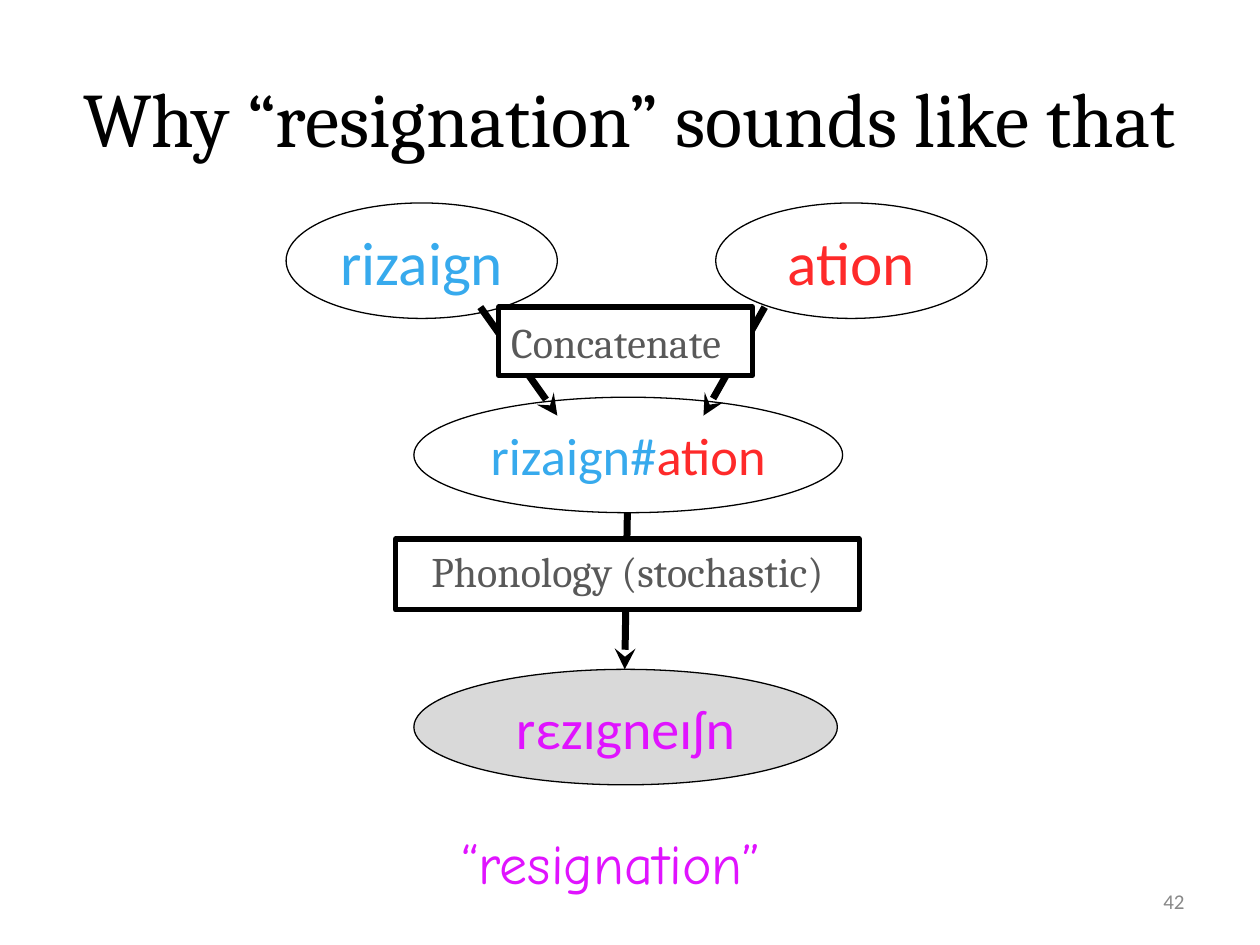
"""Build the slide that derives the sound of "resignation" step by step."""
from lxml import etree
from pptx import Presentation
from pptx.dml.color import RGBColor
from pptx.enum import shapes, text
from pptx.oxml.ns import qn
from pptx.util import Pt

BLACK = RGBColor(0x00, 0x00, 0x00)
WHITE = RGBColor(0xFF, 0xFF, 0xFF)
SHADE = RGBColor(0xD9, 0xD9, 0xD9)
BLUE = RGBColor(0x37, 0xAA, 0xED)
RED = RGBColor(0xFE, 0x2A, 0x2A)
MAGENTA = RGBColor(0xE0, 0x13, 0xFF)
DARK_GRAY = RGBColor(0x59, 0x59, 0x59)
GRAY = RGBColor(0x88, 0x88, 0x88)

LEFT, CENTER, RIGHT = text.PP_ALIGN.LEFT, text.PP_ALIGN.CENTER, text.PP_ALIGN.RIGHT
TOP, MIDDLE = text.MSO_ANCHOR.TOP, text.MSO_ANCHOR.MIDDLE
OVAL, RECTANGLE = shapes.MSO_SHAPE.OVAL, shapes.MSO_SHAPE.RECTANGLE
OVAL_HEIGHT = 66


def write(shape, parts, font, size, align=CENTER, anchor=MIDDLE, wrap=True):
    """Fill a shape with one paragraph made of (wording, colour) parts."""
    frame = shape.text_frame
    frame.word_wrap = wrap
    frame.vertical_anchor = anchor
    para = frame.paragraphs[0]
    para.alignment = align
    para.font.name, para.font.size = font, Pt(size)
    for wording, color in parts:
        span = para.add_run()
        span.text = wording
        span.font.color.rgb = color


def add_outlined(page, kind, box, fill, weight):
    """Add a black-outlined shape with an optional fill."""
    shape = page.shapes.add_shape(kind, *map(Pt, box))
    shape.shadow.inherit = False
    if fill is None:
        shape.fill.background()
    else:
        shape.fill.solid()
        shape.fill.fore_color.rgb = fill
    shape.line.color.rgb = BLACK
    shape.line.width = Pt(weight)
    return shape


def add_form(page, left, top, width, parts, size, fill=None):
    """Add an ellipse holding one word form."""
    oval = add_outlined(page, OVAL, (left, top, width, OVAL_HEIGHT), fill, 0.75)
    write(oval, parts, "Calibri", size, wrap=False)


def add_process(page, box, wording, align, anchor):
    """Add a heavy rectangle naming a processing step."""
    block = add_outlined(page, RECTANGLE, box, WHITE, 3)
    write(block, [(wording, DARK_GRAY)], "Cambria", 24, align, anchor)


def add_arrow(page, begin, end):
    """Add a thick arrow between two points."""
    arrow = page.shapes.add_connector(
        shapes.MSO_CONNECTOR.STRAIGHT, *map(Pt, begin + end))
    arrow.line.color.rgb = BLACK
    arrow.line.width = Pt(4)
    etree.SubElement(arrow.line._get_or_add_ln(), qn("a:tailEnd"), type="stealth")
    etree.SubElement(arrow._element.spPr, qn("a:effectLst"))


def add_text(page, box, wording, color, font, size, align, anchor):
    """Add a text box with one line."""
    label = page.shapes.add_textbox(*map(Pt, box))
    write(label, [(wording, color)], font, size, align, anchor)


def place_title(page, left, top, width, height):
    """Place and format the title."""
    title = page.shapes.title
    title.left, title.top, title.width, title.height = map(
        Pt, (left, top, width, height))
    write(title, [("Why “resignation” sounds like that", BLACK)], "Cambria", 44)


def draw_derivation(page, left, top):
    """Draw the flow from morphemes to spoken word from a top-left corner."""
    add_form(page, left, top, 155, [("rizaign", BLUE)], 35)
    add_form(page, left + 245.5, top, 155, [("ation", RED)], 35)
    add_form(page, left + 73, top + 111, 245,
             [("rizaign#", BLUE), ("ation", RED)], 30)
    add_form(page, left + 73, top + 266.5, 242, [("rεzɪgneɪʃn", MAGENTA)], 32, SHADE)
    for begin, end in (((273.5, 59.5), (189.5 + 49, 121.5)),
                       ((111, 59.5), (155, 121.5)),
                       ((195, 177), (193.5, 266.5))):
        add_arrow(page, (left + begin[0], top + begin[1]),
                  (left + end[0], top + end[1]))
    add_process(page, (left + 121.5, top + 59.5, 145, 39), "Concatenate", LEFT, MIDDLE)
    add_process(page, (left + 62.5, top + 192, 265, 40.5),
                "Phonology (stochastic)", CENTER, TOP)
    add_text(page, (left + 93, top + 354, 249, 55.5), "“resignation”",
             MAGENTA, "Comic Neue", 32, LEFT, TOP)


def main():
    """Build and save the deck."""
    deck = Presentation()
    deck.slide_width, deck.slide_height = Pt(720), Pt(540)
    page = deck.slides.add_slide(deck.slide_layouts[5])
    place_title(page, 18, 21.5, 684, 90)
    draw_derivation(page, 163.5, 116)
    add_text(page, (516, 500.5, 168, 28.75), "42", GRAY, "Calibri", 12, RIGHT, MIDDLE)
    deck.save("out.pptx")


if __name__ == "__main__":
    main()
